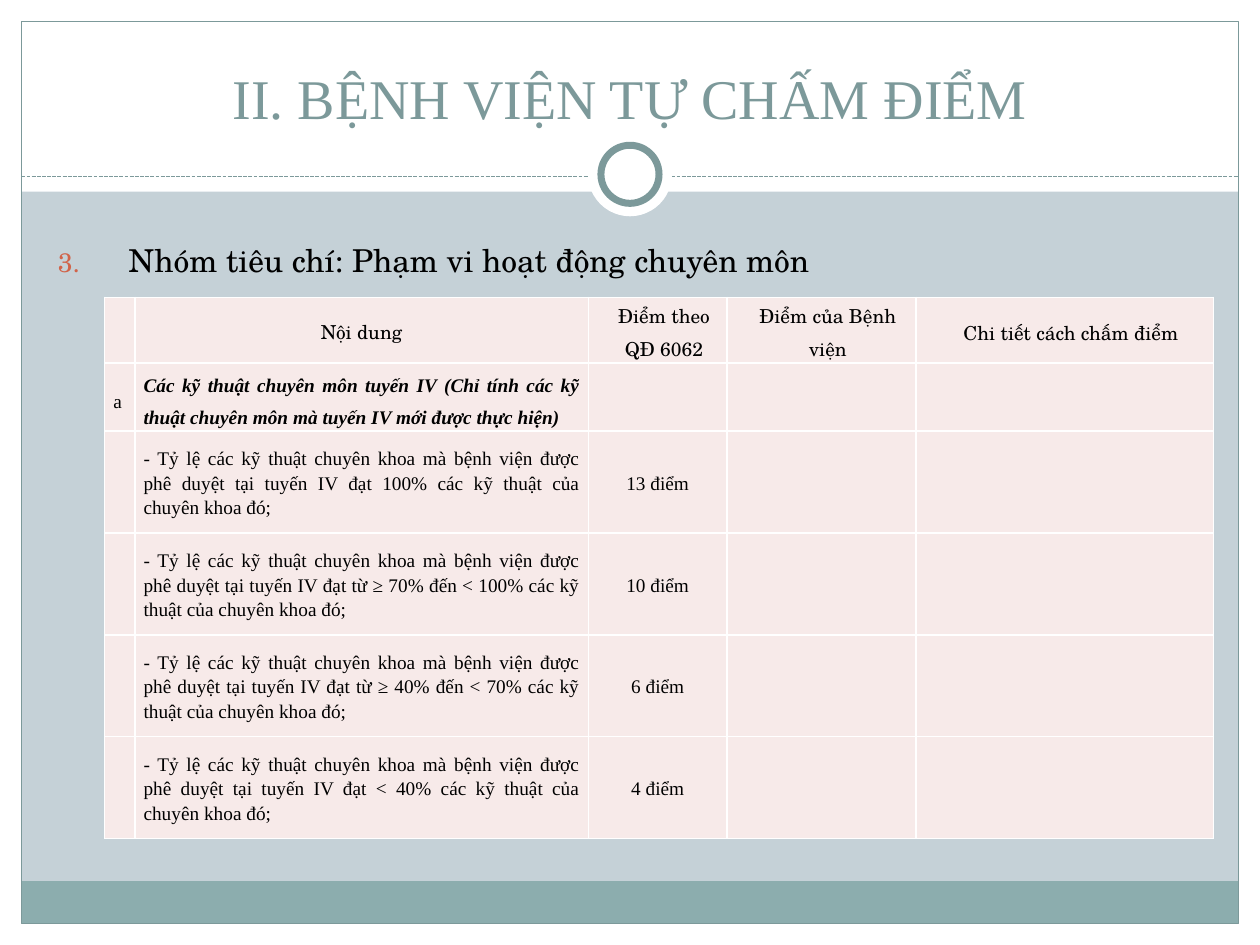
from dataclasses import dataclass
from typing import Optional, Union

from lxml import etree
from pptx import Presentation
from pptx import util as u
from pptx.dml.color import RGBColor
from pptx.enum import dml, shapes, text
from pptx.oxml import ns

Pt = u.Pt
AL = text.PP_ALIGN


@dataclass(frozen=True)
class Theme:
    background: str = "C5D1D7"
    white: str = "FFFFFF"
    accent: str = "7C999A"
    footer: str = "8CADAE"
    number: str = "D16349"
    ink: str = "000000"
    cell: str = "F7EAE9"
    serif: str = "Times New Roman"
    schola: str = "TeX Gyre Schola"
    title: float = 32
    body: float = 18
    table: float = 11


@dataclass(frozen=True)
class Panel:
    x: float
    y: float
    w: float
    h: float
    fill: Optional[str] = None
    line: Optional[str] = None
    weight: float = 0.75
    kind: shapes.MSO_SHAPE = shapes.MSO_SHAPE.RECTANGLE


@dataclass(frozen=True)
class CellStyle:
    font: str
    align: AL = AL.LEFT
    spacing: Union[float, u.Length] = 1.15
    before: float = 6
    after: float = 6
    inset: float = 5
    indent: float = 0
    strong: bool = False


T = Theme()
W, H, EDGE = 720, 540, 12.24
INNER = W - 2 * EDGE
RULE_Y = 100.8
OVAL = shapes.MSO_SHAPE.OVAL

PANELS = [
    Panel(0, H - EDGE, W, EDGE, T.white),
    Panel(0, 0, W, 109.5, T.white),
    Panel(0, 0, EDGE, H, T.white),
    Panel(W - EDGE, 0, EDGE, H, T.white),
    Panel(EDGE, 503.5, INNER, 24.26, T.footer),
    Panel(EDGE, EDGE, INNER, H - 2 * EDGE, line=T.accent),
]
RING = [
    Panel(336, 75.6, 48, 48, T.white, kind=OVAL),
    Panel(343.4, 83, 33.2, 33.2, T.white, T.accent, 4, OVAL),
]

HEAD = CellStyle(T.schola, AL.CENTER, Pt(18))
HEAD_INDENTED = CellStyle(T.schola, AL.CENTER, inset=0, indent=7.2)
LETTER = CellStyle(T.serif, spacing=Pt(18))
GROUP = CellStyle(T.serif, AL.JUSTIFY, Pt(18), strong=True)
CRITERION = CellStyle(T.serif, AL.JUSTIFY, after=10)
POINTS = CellStyle(T.serif, AL.CENTER, before=0, after=10)

COLUMNS = [13.3, 259.2, 79.2, 108, 169.9]
ROWS = [37.5, 38.9] + [58.2] * 4
SCORES = [
    ("đạt 100%", 13),
    ("đạt từ ≥ 70% đến < 100%", 10),
    ("đạt từ ≥ 40% đến < 70%", 6),
    ("đạt < 40%", 4),
]
CONTENT = [
    [None, ("Nội dung", HEAD), ("Điểm theo QĐ 6062", HEAD_INDENTED),
     ("Điểm của Bệnh viện", HEAD_INDENTED), ("Chi tiết cách chấm điểm", HEAD_INDENTED)],
    [("a", LETTER),
     ("Các kỹ thuật chuyên môn tuyến IV (Chỉ tính các kỹ thuật chuyên môn "
      "mà tuyến IV mới được thực hiện)", GROUP), None, None, None],
] + [
    [None,
     ("- Tỷ lệ các kỹ thuật chuyên khoa mà bệnh viện được phê duyệt tại tuyến IV "
      f"{rate} các kỹ thuật của chuyên khoa đó;", CRITERION),
     (f"{points} điểm", POINTS), None, None]
    for rate, points in SCORES
]


def rgb(color: str) -> RGBColor:
    return RGBColor.from_string(color)


def add_xml(parent, tag: str, **attrs: str):
    return etree.SubElement(parent, ns.qn(tag), attrs)


def style_runs(p, font: str, size: float, color: str, strong: bool = False) -> None:
    for r in p.runs:
        f = r.font
        f.name, f.size, f.color.rgb = font, Pt(size), rgb(color)
        f.bold = f.italic = strong


def draw_panel(s, panel: Panel) -> None:
    sp = s.shapes.add_shape(panel.kind, Pt(panel.x), Pt(panel.y), Pt(panel.w), Pt(panel.h))
    sp.shadow.inherit = False
    if panel.fill:
        sp.fill.solid()
        sp.fill.fore_color.rgb = rgb(panel.fill)
    else:
        sp.fill.background()
    if panel.line:
        sp.line.color.rgb = rgb(panel.line)
        sp.line.width = Pt(panel.weight)
    else:
        sp.line.fill.background()


def draw_rule(s) -> None:
    cx = s.shapes.add_connector(shapes.MSO_CONNECTOR.STRAIGHT,
                                Pt(EDGE), Pt(RULE_Y), Pt(W - EDGE), Pt(RULE_Y))
    cx.line.color.rgb = rgb(T.accent)
    cx.line.width = Pt(0.75)
    cx.line.dash_style = dml.MSO_LINE.SQUARE_DOT
    add_xml(cx._element.spPr, "a:effectLst")


def add_text(s, words: str, x: float, y: float, w: float, h: float):
    tf = s.shapes.add_textbox(Pt(x), Pt(y), Pt(w), Pt(h)).text_frame
    tf.word_wrap = True
    tf.text = words
    return tf


def draw_title(s) -> None:
    tf = add_text(s, "II. BỆNH VIỆN TỰ CHẤM ĐIỂM", 24, 18, 672, 60)
    tf.vertical_anchor = text.MSO_ANCHOR.BOTTOM
    p = tf.paragraphs[0]
    p.alignment = AL.CENTER
    style_runs(p, T.serif, T.title, T.accent)


def draw_heading(s) -> None:
    tf = add_text(s, "Nhóm tiêu chí: Phạm vi hoạt động chuyên môn", 26, 134, 670, 360)
    p = tf.paragraphs[0]
    p.space_before = Pt(3.6)
    style_runs(p, T.schola, T.body, T.ink)
    pPr = p._p.get_or_add_pPr()
    pPr.set("marL", str(Pt(40.5)))
    pPr.set("indent", str(-Pt(40.5)))
    add_xml(add_xml(pPr, "a:buClr"), "a:srgbClr", val=T.number)
    add_xml(pPr, "a:buSzPct", val="85000")
    add_xml(pPr, "a:buAutoNum", type="arabicPeriod", startAt="3")


def draw_cell(cell, content: Optional[tuple[str, CellStyle]]) -> None:
    tcPr = cell._tc.get_or_add_tcPr()
    for side in ("a:lnL", "a:lnR", "a:lnT", "a:lnB"):
        ln = add_xml(tcPr, side, w=str(Pt(1)))
        add_xml(add_xml(ln, "a:solidFill"), "a:srgbClr", val=T.white)
    cell.fill.solid()
    cell.fill.fore_color.rgb = rgb(T.cell)
    if content is None:
        return
    words, style = content
    cell.vertical_anchor = text.MSO_ANCHOR.MIDDLE
    cell.margin_left = cell.margin_right = Pt(style.inset)
    cell.margin_top = cell.margin_bottom = 0
    p = cell.text_frame.paragraphs[0]
    p.text = words
    p.alignment, p.line_spacing = style.align, style.spacing
    p.space_before, p.space_after = Pt(style.before), Pt(style.after)
    p._p.get_or_add_pPr().set("marL", str(Pt(style.indent)))
    style_runs(p, style.font, T.table, T.ink, style.strong)


def draw_table(s) -> None:
    tbl = s.shapes.add_table(len(ROWS), len(COLUMNS), Pt(59.8), Pt(170),
                             Pt(sum(COLUMNS)), Pt(sum(ROWS))).table
    tbl.first_row = tbl.horz_banding = False
    for column, width in zip(tbl.columns, COLUMNS):
        column.width = Pt(width)
    for row, height, contents in zip(tbl.rows, ROWS, CONTENT):
        row.height = Pt(height)
        for cell, content in zip(row.cells, contents):
            draw_cell(cell, content)


def main() -> None:
    prs = Presentation()
    prs.slide_width, prs.slide_height = Pt(W), Pt(H)
    s = prs.slides.add_slide(prs.slide_layouts[6])
    s.background.fill.solid()
    s.background.fill.fore_color.rgb = rgb(T.background)
    for panel in PANELS:
        draw_panel(s, panel)
    draw_rule(s)
    for panel in RING:
        draw_panel(s, panel)
    draw_heading(s)
    draw_title(s)
    draw_table(s)
    prs.save("out.pptx")


if __name__ == "__main__":
    main()
